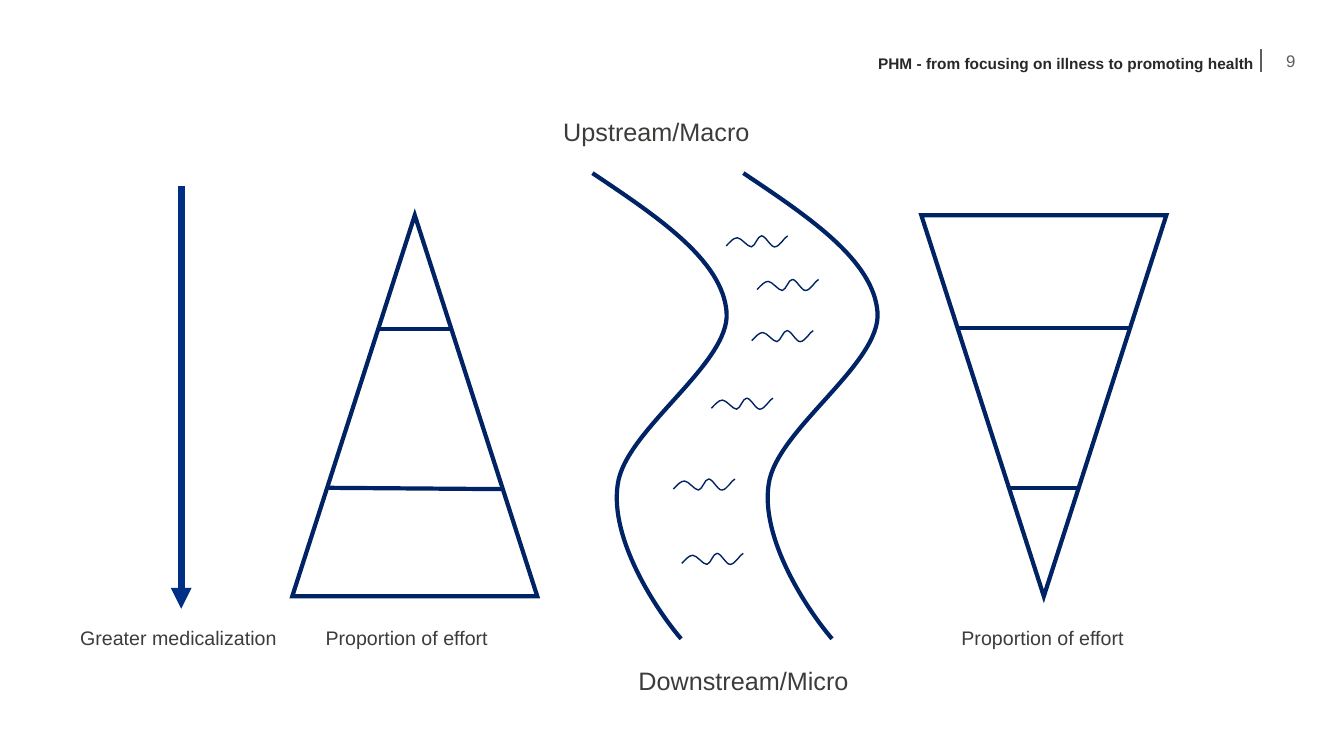
"""Build the slide on moving effort from illness to promoting health."""
import dataclasses
import itertools
import typing

import lxml.etree
import pptx
import pptx.dml.color
import pptx.enum.shapes
import pptx.enum.text
import pptx.oxml.ns
import pptx.util

WIDTH = pptx.util.Inches(13.33)
HEIGHT = pptx.util.Inches(7.5)
GRID = 100
INK = {"navy": "002365", "edge": "002363", "arrow": "002F86",
       "head": "282828", "text": "3C3C3B", "grey": "5E5E5E"}
ALIGN = pptx.enum.text.PP_ALIGN
ANCHOR = pptx.enum.text.MSO_ANCHOR
FIT = pptx.enum.text.MSO_AUTO_SIZE
Point = tuple[float, float]

BANK = [(4.8, 5.73), (9.68, 11.47), (9.98, 18.4),
        (10.28, 25.2), (2.4, 34), (1.88, 41.2),
        (1.28, 48.4), (4.73, 57.73), (6.6, 61.6)]
WAVE = [(0.3, -0.53), (0.53, -1.07), (0.83, -1.07),
        (1.13, -1.07), (1.58, 0.13), (1.88, 0.13),
        (2.18, 0), (2.33, -1.33), (2.63, -1.33),
        (2.93, -1.33), (3.3, 0.13), (3.6, 0.13),
        (3.98, 0.13), (4.35, -1.2), (4.58, -1.33)]


@dataclasses.dataclass
class Label:
    text: str
    col: float
    row: float
    cols: float
    rows: float
    size: float
    ink: str = "text"
    bold: bool = False
    align: typing.Any = ALIGN.CENTER


@dataclasses.dataclass
class Rule:
    start: Point
    end: Point
    ink: str = "navy"
    width: float = 3
    arrow: bool = False


@dataclasses.dataclass
class Curve:
    start: Point
    knots: list[Point]
    ink: str
    width: float


@dataclasses.dataclass
class Cone:
    col: float
    turn: float


TITLE = Label("PHM - from focusing on illness to promoting health",
              64.58, 6.5, 29.55, 3.87, 11, "head", True, ALIGN.LEFT)
PAGE = Label("9", 94.2, 6.53, 2.18, 3.07, 12, "grey", align=ALIGN.RIGHT)
LABELS = [
    Label("Upstream/Macro ", 39.95, 14.7, 18.3, 5.33, 18),
    Label("Downstream/Micro", 45.05, 87.33, 20.55, 5.33, 18),
    Label("Proportion of effort", 69.93, 82.13, 15.3, 4.53, 14),
    Label("Proportion of effort", 21.75, 82.13, 17.03, 4.53, 14),
    Label("Greater medicalization ", 4.33, 82.13, 18.3, 4.53, 14),
]
BANKS = [(44.08, 22.9), (55.31, 22.9)]
WAVES = [(54.03, 32.53), (56.33, 38.3), (55.93, 45.07),
         (52.93, 54), (50.1, 64.7), (50.72, 74.53)]
CURVES = ([Curve(start, BANK, "navy", 3) for start in BANKS]
          + [Curve(start, WAVE, "edge", 1) for start in WAVES])
CONES = [Cone(68.55, 180), Cone(21.75, 0)]
RULES = [
    Rule((93.83, 9.47), (93.83, 6.53), "grey", 1),
    Rule((71.25, 43.38), (84.08, 43.38)),
    Rule((75, 64.53), (80.18, 64.53)),
    Rule((28.13, 43.54), (33.6, 43.54)),
    Rule((24.45, 64.53), (37.28, 64.7)),
    Rule((13.48, 24.6), (13.48, 80.53), "arrow", 5, True),
]


def across(cols: float) -> int:
    return round(WIDTH * cols / GRID)


def down(rows: float) -> int:
    return round(HEIGHT * rows / GRID)


def color(ink: str) -> pptx.dml.color.RGBColor:
    return pptx.dml.color.RGBColor.from_string(INK[ink])


def assign(item: typing.Any, form: dict[str, typing.Any]) -> None:
    for name, value in form.items():
        setattr(item, name, value)


def add_tag(node: typing.Any, tag: str, **values: str) -> typing.Any:
    return lxml.etree.SubElement(node, pptx.oxml.ns.qn(tag), values)


def stroke(line: typing.Any, ink: str, width: float) -> None:
    line.color.rgb = color(ink)
    line.width = pptx.util.Pt(width)


def write(shape: typing.Any, label: Label, form: dict[str, typing.Any]) -> None:
    assign(shape, {"left": across(label.col), "top": down(label.row),
                   "width": across(label.cols), "height": down(label.rows)})
    frame = shape.text_frame
    frame.text = label.text
    assign(frame, {"word_wrap": True, "vertical_anchor": ANCHOR.TOP} | form)
    para = frame.paragraphs[0]
    para.alignment = label.align
    font = para.runs[0].font
    assign(font, {"name": "Arial", "size": pptx.util.Pt(label.size),
                  "bold": label.bold})
    font.color.rgb = color(label.ink)


def draw_rule(shapes: typing.Any, rule: Rule) -> None:
    (left, top), (right, base) = rule.start, rule.end
    line = shapes.add_connector(
        pptx.enum.shapes.MSO_CONNECTOR.STRAIGHT,
        across(left), down(top), across(right), down(base))
    stroke(line.line, rule.ink, rule.width)
    add_tag(line._element.spPr, "a:effectLst")
    if rule.arrow:
        add_tag(line.line._get_or_add_ln(), "a:tailEnd", type="triangle")


def bend(shape: typing.Any, spots: list[tuple[int, int]]) -> None:
    sides = list(shape._element.iter(pptx.oxml.ns.qn("a:lnTo")))
    for index, side in enumerate(sides):
        arc = add_tag(side.getparent(), "a:cubicBezTo")
        for x, y in spots[3 * index:3 * index + 3]:
            add_tag(arc, "a:pt", x=str(x - shape.left), y=str(y - shape.top))
        side.getparent().remove(side)


def draw_curve(shapes: typing.Any, curve: Curve) -> None:
    col, row = curve.start
    spots = [(across(col + x), down(row + y)) for x, y in curve.knots]
    pen = shapes.build_freeform(across(col), down(row))
    pen.add_line_segments(spots[2::3], close=False)
    shape = pen.convert_to_shape()
    bend(shape, spots)
    shape.shadow.inherit = False
    shape.fill.background()
    stroke(shape.line, curve.ink, curve.width)


def draw_cone(shapes: typing.Any, cone: Cone) -> None:
    shape = shapes.add_shape(
        pptx.enum.shapes.MSO_SHAPE.ISOSCELES_TRIANGLE,
        across(cone.col), down(28.47), across(18.23), down(50.4))
    shape.rotation = cone.turn
    shape.shadow.inherit = False
    shape.fill.background()
    stroke(shape.line, "edge", 3)
    add_tag(shape.line._get_or_add_ln(), "a:miter", lim="800000")


def main() -> None:
    deck = pptx.Presentation()
    assign(deck, {"slide_width": WIDTH, "slide_height": HEIGHT})
    shapes = deck.slides.add_slide(deck.slide_layouts[5]).shapes
    grow = {"auto_size": FIT.SHAPE_TO_FIT_TEXT}
    flush = {"vertical_anchor": ANCHOR.MIDDLE} | dict.fromkeys(
        ("margin_left", "margin_top", "margin_right", "margin_bottom"), 0)
    write(shapes.title, TITLE, grow)
    for curve in CURVES:
        draw_curve(shapes, curve)
    for cone in CONES:
        draw_cone(shapes, cone)
    for rule in RULES:
        draw_rule(shapes, rule)
    pairs = zip(LABELS + [PAGE], itertools.chain([grow] * len(LABELS), [flush]))
    for label, form in pairs:
        write(shapes.add_textbox(0, 0, 0, 0), label, form)
    deck.save("out.pptx")


if __name__ == "__main__":
    main()
